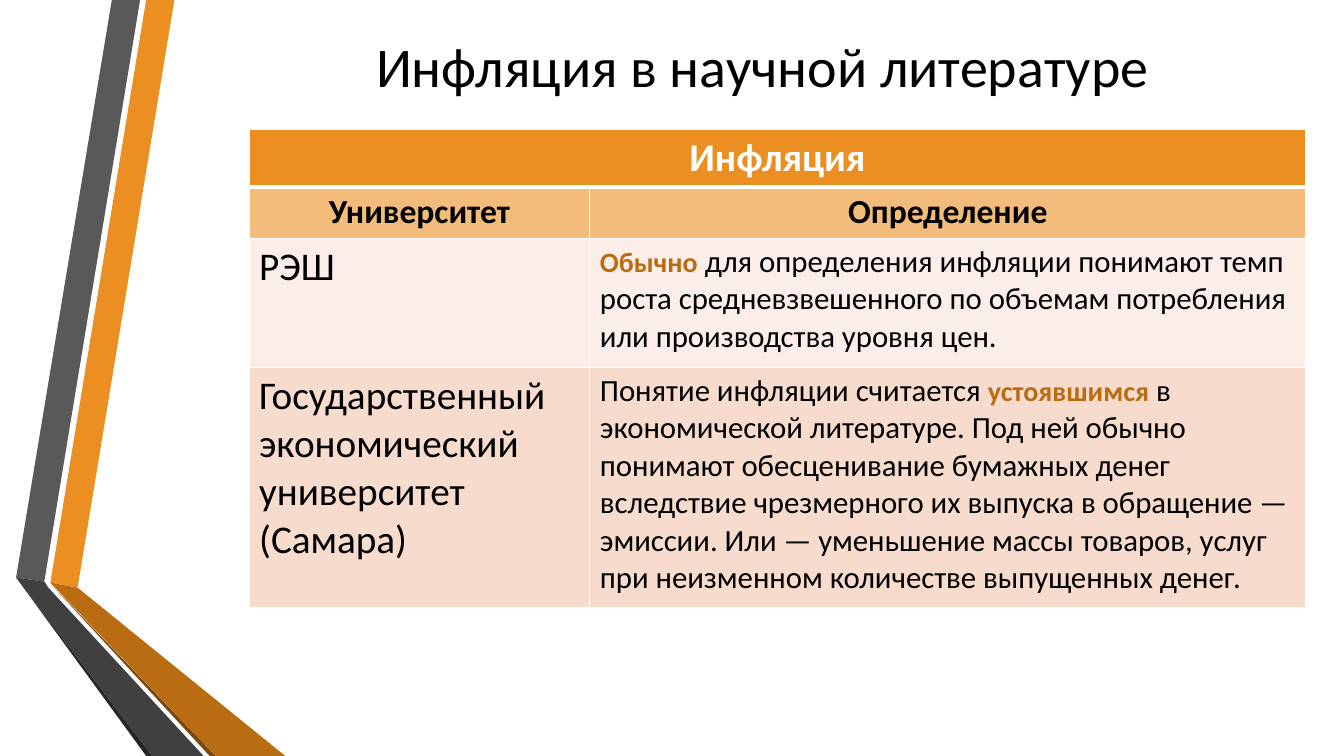
from dataclasses import dataclass

from lxml import etree
from pptx import Presentation
from pptx.dml.color import RGBColor
from pptx.enum.text import MSO_ANCHOR, PP_ALIGN
from pptx.oxml.ns import qn
from pptx.util import Inches, Pt

CENTER, LEFT = PP_ALIGN.CENTER, PP_ALIGN.LEFT
MIDDLE = MSO_ANCHOR.MIDDLE
TITLE_ONLY = 5


@dataclass(frozen=True)
class Theme:
    font: str = "Calibri"
    black: str = "000000"
    white: str = "FFFFFF"
    orange: str = "EB8F22"
    dark_orange: str = "B96C11"
    orange_shadow: str = "7B480B"
    gray: str = "595959"
    dark_gray: str = "404040"
    gray_shadow: str = "262626"
    subheader: str = "F3BC7A"
    light_row: str = "FBEEE8"
    dark_row: str = "F7DBCD"
    title_size: int = 40
    large_size: int = 28
    subheader_size: int = 24
    body_size: int = 22
    accent_size: int = 20
    border: int = 1
    header_border: int = 3


THEME = Theme()

TITLE = "Инфляция в научной литературе"
TITLE_BOX = (2.2, 0, 10.72, 1.3)
TABLE_BOX = (2.47, 1.28, 10.48, 4.72)
COLUMN_WIDTHS = (3.38, 7.1)
ROW_HEIGHTS = (0.56, 0.49, 1.28, 2.39)
ROW_FILLS = (THEME.orange, THEME.subheader, THEME.light_row, THEME.dark_row)

HEADER = (THEME.large_size, THEME.white, True)
SUBHEADER = (THEME.subheader_size, THEME.black, True)
UNIVERSITY = (THEME.large_size, THEME.black, False)
BODY = (THEME.body_size, THEME.black, False)
ACCENT = (THEME.accent_size, THEME.dark_orange, True)

ROWS = [
    [[("Инфляция", HEADER)], []],
    [[("Университет", SUBHEADER)], [("Определение", SUBHEADER)]],
    [
        [("РЭШ", UNIVERSITY)],
        [
            ("Обычно", ACCENT),
            (" для определения инфляции понимают темп роста средневзвешенного "
             "по объемам потребления или производства уровня цен.", BODY),
        ],
    ],
    [
        [("Государственный экономический университет (Самара)", UNIVERSITY)],
        [
            ("Понятие инфляции считается ", BODY),
            ("устоявшимся", ACCENT),
            (" в экономической литературе. Под ней обычно понимают обесценивание "
             "бумажных денег вследствие чрезмерного их выпуска в обращение — эмиссии. "
             "Или — уменьшение массы товаров, услуг при неизменном количестве "
             "выпущенных денег.", BODY),
        ],
    ],
]

RIBBONS = [
    (THEME.orange, [(0.5, 5.78), (0.77, 5.83), (1.73, 0), (1.45, 0)]),
    (THEME.gray, [(1.39, 0), (1.11, 0), (0.16, 5.73), (0.44, 5.77)]),
    (THEME.gray_shadow, [(0.16, 5.73), (1.45, 7.5), (1.51, 7.5)]),
    (THEME.orange_shadow, [(0.5, 5.79), (2.08, 7.5), (2.14, 7.5)]),
    (THEME.dark_orange, [(0.5, 5.78), (2.14, 7.5), (2.83, 7.5), (0.77, 5.83)]),
    (THEME.dark_gray, [(2.02, 7.5), (0.48, 5.83), (0.44, 5.77), (0.16, 5.73), (1.51, 7.5)]),
]


def format_run(run, size, color, bold):
    run.font.name = THEME.font
    run.font.size = Pt(size)
    run.font.bold = bold
    run.font.color.rgb = RGBColor.from_string(color)


def add_ribbon(slide, color, points):
    start, *others = [(Inches(x), Inches(y)) for x, y in points]
    builder = slide.shapes.build_freeform(*start)
    builder.add_line_segments(others, close=True)
    shape = builder.convert_to_shape()
    shape.shadow.inherit = False
    shape.fill.solid()
    shape.fill.fore_color.rgb = RGBColor.from_string(color)
    shape.line.fill.background()


def add_title(slide):
    title = slide.shapes.title
    title.left, title.top, title.width, title.height = map(Inches, TITLE_BOX)
    title.text_frame.text = TITLE
    title.text_frame.vertical_anchor = MIDDLE
    paragraph = title.text_frame.paragraphs[0]
    paragraph.alignment = CENTER
    format_run(paragraph.runs[0], THEME.title_size, THEME.black, False)


def set_borders(cell, row):
    properties = cell._tc.get_or_add_tcPr()
    widths = {"L": THEME.border, "R": THEME.border, "T": THEME.border, "B": THEME.border}
    if row == 0:
        widths["B"] = THEME.header_border
    if row == 1:
        widths["T"] = THEME.header_border
    for side, width in widths.items():
        line = etree.SubElement(properties, qn(f"a:ln{side}"), w=str(Pt(width)))
        fill = etree.SubElement(line, qn("a:solidFill"))
        etree.SubElement(fill, qn("a:srgbClr"), val=THEME.white)


def fill_cell(cell, row, pieces):
    set_borders(cell, row)
    cell.fill.solid()
    cell.fill.fore_color.rgb = RGBColor.from_string(ROW_FILLS[row])
    paragraph = cell.text_frame.paragraphs[0]
    paragraph.alignment = CENTER if row < 2 else LEFT
    for text, style in pieces:
        run = paragraph.add_run()
        run.text = text
        format_run(run, *style)


def add_definitions(slide):
    frame = slide.shapes.add_table(len(ROWS), len(COLUMN_WIDTHS), *map(Inches, TABLE_BOX))
    table = frame.table
    table.horz_banding = False
    for column, width in zip(table.columns, COLUMN_WIDTHS):
        column.width = Inches(width)
    for row, height in zip(table.rows, ROW_HEIGHTS):
        row.height = Inches(height)
    table.cell(0, 0).merge(table.cell(0, 1))
    for row, cells in enumerate(ROWS):
        for column, pieces in enumerate(cells):
            fill_cell(table.cell(row, column), row, pieces)


def main():
    presentation = Presentation()
    presentation.slide_width = Inches(13.33)
    presentation.slide_height = Inches(7.5)
    slide = presentation.slides.add_slide(presentation.slide_layouts[TITLE_ONLY])
    for color, points in RIBBONS:
        add_ribbon(slide, color, points)
    add_title(slide)
    add_definitions(slide)
    presentation.save("out.pptx")


if __name__ == "__main__":
    main()
